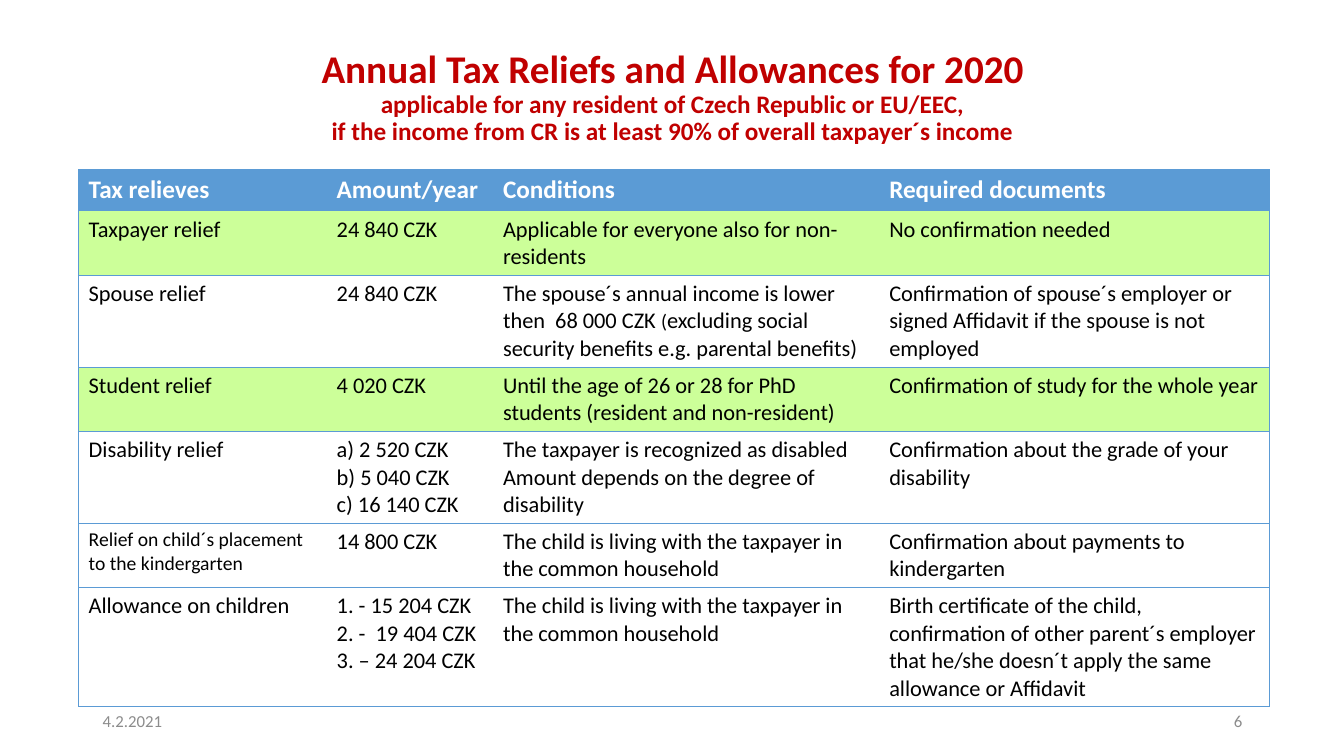
import pptx
import pptx.dml.color
import pptx.enum.text
import pptx.oxml
import pptx.oxml.ns
import pptx.util
from pptx.util import Inches

ANCHOR = pptx.enum.text.MSO_ANCHOR
ALIGN = pptx.enum.text.PP_ALIGN

ROWS = [
    ["Tax relieves", "Amount/year", "Conditions", "Required documents"],
    ["Taxpayer relief", "24 840 CZK",
     "Applicable for everyone also for non-residents",
     "No confirmation needed"],
    ["Spouse relief", "24 840 CZK",
     "The spouse´s annual income is lower then  68 000 CZK "
     "(excluding social security benefits e.g. parental benefits)",
     "Confirmation of spouse´s employer or signed Affidavit "
     "if the spouse is not employed"],
    ["Student relief", "4 020 CZK",
     "Until the age of 26 or 28 for PhD students (resident and non-resident)",
     "Confirmation of study for the whole year"],
    ["Disability relief", "a) 2 520 CZK\nb) 5 040 CZK\nc) 16 140 CZK",
     "The taxpayer is recognized as disabled "
     "Amount depends on the degree of disability",
     "Confirmation about the grade of your disability"],
    ["Relief on child´s placement to the kindergarten", "14 800 CZK",
     "The child is living with the taxpayer in the common household",
     "Confirmation about payments to kindergarten"],
    ["Allowance on children",
     "1. - 15 204 CZK\n2. -  19 404 CZK\n3. – 24 204 CZK",
     "The child is living with the taxpayer in the common household",
     "Birth certificate of the child, confirmation of other parent´s employer "
     "that he/she doesn´t apply the same allowance or Affidavit"],
]
COL_WIDTHS = [2.46, 1.65, 3.83, 3.87]
ROW_HEIGHTS = [0.41, 0.64, 0.91, 0.64, 0.91, 0.64, 1.18]
GREEN_ROWS = (1, 3)
SMALL_CELL = (5, 0)


def rgb(value):
    return pptx.dml.color.RGBColor.from_string(value)


class Deck:
    FONT = "Calibri"
    RED, BLUE, GREEN, GREY = "C00000", "5B9BD5", "CCFF99", "8C8C8C"
    WHITE, BLACK = "FFFFFF", "000000"

    def __init__(self, prs):
        self.s = prs.slides.add_slide(prs.slide_layouts[6])

    def style(self, r, size, color, bold=False):
        r.font.name = self.FONT
        r.font.size = pptx.util.Pt(size)
        r.font.bold = bold
        r.font.color.rgb = rgb(color)

    def text(self, box, text, sizes, color, bold=False, align=ALIGN.LEFT,
             spacing=1.0):
        """Add one paragraph; sizes holds a point size for each line."""
        sp = self.s.shapes.add_textbox(*map(Inches, box))
        tf = sp.text_frame
        tf.word_wrap = True
        tf.vertical_anchor = ANCHOR.MIDDLE
        p = tf.paragraphs[0]
        p.text = text
        p.alignment = align
        p.line_spacing = spacing
        for r, size in zip(p.runs, sizes):
            self.style(r, size, color, bold)

    def borders(self, cell, visible):
        """Draw the sides named in visible and clear the others."""
        tc_pr = cell._tc.get_or_add_tcPr()
        for i, side in enumerate("LRTB"):
            fill = (f'<a:solidFill><a:srgbClr val="{self.BLUE}"/></a:solidFill>'
                    if side in visible else "<a:noFill/>")
            ln = pptx.oxml.parse_xml(
                f'<a:ln{side} {pptx.oxml.ns.nsdecls("a")} w="6350">{fill}</a:ln{side}>')
            tc_pr.insert(i, ln)

    def cell(self, cell, text, size, color, bold, fill):
        cell.text = text
        for p in cell.text_frame.paragraphs:
            for r in p.runs:
                self.style(r, size, color, bold)
        if fill:
            cell.fill.solid()
            cell.fill.fore_color.rgb = rgb(fill)
        else:
            cell.fill.background()

    def table(self, left, top, rows, widths, heights):
        frame = self.s.shapes.add_table(
            len(rows), len(widths), Inches(left), Inches(top),
            Inches(sum(widths)), Inches(sum(heights)))
        table = frame.table
        table.horz_banding = False
        for col, width in zip(table.columns, widths):
            col.width = Inches(width)
        for row, height in zip(table.rows, heights):
            row.height = Inches(height)
        for i, row in enumerate(rows):
            header = i == 0
            fill = self.BLUE if header else self.GREEN if i in GREEN_ROWS else None
            for j, text in enumerate(row):
                cell = table.cell(i, j)
                size = 18 if header else 14 if (i, j) == SMALL_CELL else 16
                self.cell(cell, text, size, self.WHITE if header else self.BLACK,
                          header, fill)
                sides = "TB" + "L" * (j == 0) + "R" * (j == len(row) - 1)
                self.borders(cell, sides)
        return table


def main():
    prs = pptx.Presentation()
    prs.slide_width, prs.slide_height = Inches(13.33), Inches(7.5)
    deck = Deck(prs)

    # Title
    deck.text((0.92, 0.4, 11.5, 1.14),
              "Annual Tax Reliefs and Allowances for 2020\v"
              "applicable for any resident of Czech Republic or EU/EEC,\v"
              "if the income from CR is at least 90% of overall taxpayer´s income",
              (28, 18, 18), deck.RED, True, ALIGN.CENTER, 0.9)

    # Reliefs table, with a smaller opening bracket in the spouse condition
    table = deck.table(0.78, 1.68, ROWS, COL_WIDTHS, ROW_HEIGHTS)
    p = table.cell(2, 2).text_frame.paragraphs[0]
    before, bracket, after = p.runs[0].text.partition("(")
    p.runs[0].text = before
    for part, size in ((bracket, 14), (after, 16)):
        r = p.add_run()
        r.text = part
        deck.style(r, size, deck.BLACK)

    # Date and slide number
    deck.text((0.92, 6.95, 3, 0.4), "4.2.2021", (12,), deck.GREY)
    deck.text((9.42, 6.95, 3, 0.4), "6", (12,), deck.GREY, align=ALIGN.RIGHT)

    prs.save("out.pptx")


if __name__ == "__main__":
    main()
